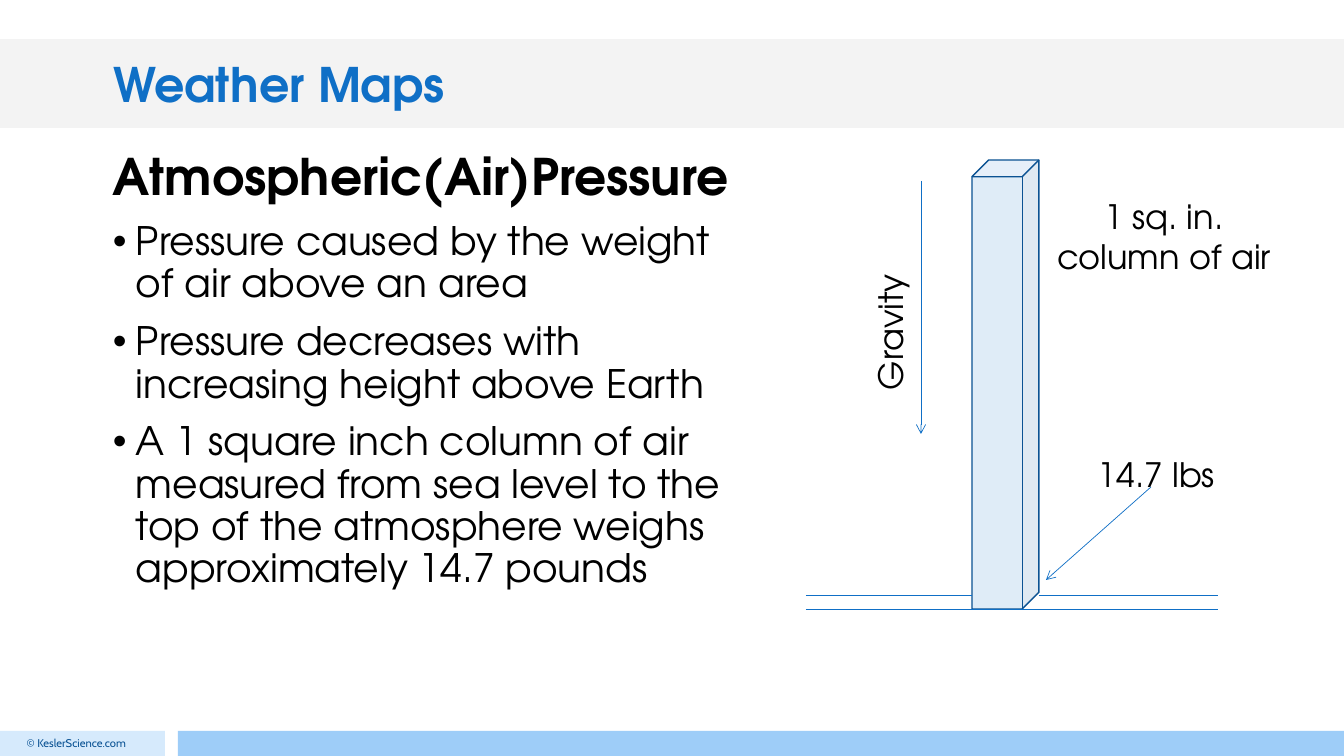
"""Build the Weather Maps slide on atmospheric pressure."""
from dataclasses import dataclass

from lxml import etree
from pptx import Presentation
from pptx.dml.color import RGBColor
from pptx.enum.shapes import MSO_CONNECTOR, MSO_SHAPE
from pptx.enum.text import MSO_ANCHOR, MSO_AUTO_SIZE, PP_ALIGN
from pptx.oxml.ns import qn
from pptx.util import Pt

RECTANGLE, CUBE = MSO_SHAPE.RECTANGLE, MSO_SHAPE.CUBE
STRAIGHT = MSO_CONNECTOR.STRAIGHT
LEFT, CENTER, RIGHT = PP_ALIGN.LEFT, PP_ALIGN.CENTER, PP_ALIGN.RIGHT
TOP, MIDDLE, BOTTOM = MSO_ANCHOR.TOP, MSO_ANCHOR.MIDDLE, MSO_ANCHOR.BOTTOM


@dataclass(frozen=True)
class Theme:
    font: str = "TeX Gyre Adventor"
    footer_font: str = "Cabin"
    blue: str = "0F6FC6"
    outline: str = "0B5292"
    footer_text: str = "0B5394"
    black: str = "000000"
    title_band: str = "D9D9D9"
    footer_light: str = "D6EAFC"
    footer_blue: str = "9ECDF8"
    heading_size: int = 36
    title_size: int = 34
    bullet_size: int = 28
    label_size: int = 24
    footer_size: int = 8


THEME = Theme()
EMU_PER_PX = 914400 / 100.8
SLIDE_SIZE = (1344, 756)

TITLE = "Weather Maps"
HEADING = "Atmospheric(Air)Pressure"
BULLETS = [
    "Pressure caused by the weight of air above an area",
    "Pressure decreases with increasing height above Earth",
    "A 1 square inch column of air measured from sea level to the top of "
    "the atmosphere weighs approximately 14.7 pounds",
]
FOOTER = "© KeslerScience.com"

BANDS = [
    ((0, 731, 165, 25), THEME.footer_light, 100),
    ((178, 731, 1166, 25), THEME.footer_blue, 100),
    ((0, 39, 1344, 89), THEME.title_band, 31),
]
TITLE_BOX = (103, -13, 1033, 130)
BODY_BOX = (103, 147, 644, 556)
FOOTER_BOX = (0, 731, 136, 25)
BULLET_INDENT = 23

COLUMN = (972, 160, 67, 449)
COLUMN_LEFT, COLUMN_RIGHT = COLUMN[0], COLUMN[0] + COLUMN[2]
GROUND_LEFT, GROUND_RIGHT = 806, 1218
GROUND_FRONT, GROUND_BACK = 609, 595
GROUND_LINES = [
    (GROUND_LEFT, GROUND_FRONT, GROUND_RIGHT, GROUND_FRONT),
    (GROUND_LEFT, GROUND_BACK, COLUMN_LEFT, GROUND_BACK),
    (COLUMN_RIGHT, GROUND_BACK, GROUND_RIGHT, GROUND_BACK),
]
ARROWS = [(921, 181, 921, 434), (1151, 487, 1046, 580)]
LABELS = [
    (["Gravity"], (821, 306, 138, 50), LEFT, 270),
    (["14.7 lbs"], (1088, 449, 138, 50), LEFT, 0),
    (["1 sq. in.", "column of air"], (1041, 191, 246, 92), CENTER, 0),
]


def px(length):
    return round(length * EMU_PER_PX)


def place(box):
    return [px(length) for length in box]


def color(value):
    return RGBColor.from_string(value)


def add_block(slide, kind, box, fill, opacity, outline=None):
    shape = slide.shapes.add_shape(kind, *place(box))
    shape.shadow.inherit = False
    shape.fill.solid()
    shape.fill.fore_color.rgb = color(fill)
    if opacity < 100:
        fill_color = shape.fill._xPr.find(qn("a:solidFill"))[0]
        etree.SubElement(fill_color, qn("a:alpha"), val=str(opacity * 1000))
    if outline:
        shape.line.color.rgb = color(outline)
        shape.line.width = Pt(1)
    else:
        shape.line.fill.background()


def add_line(slide, ends, arrow=False):
    connector = slide.shapes.add_connector(STRAIGHT, *place(ends))
    connector.line.color.rgb = color(THEME.blue)
    connector.line.width = Pt(0.5)
    if arrow:
        line = connector.line._get_or_add_ln()
        etree.SubElement(line, qn("a:tailEnd"), type="arrow")
    etree.SubElement(connector._element.spPr, qn("a:effectLst"))


def style(paragraph, size, value=THEME.black, bold=False, font=THEME.font, align=LEFT):
    paragraph.alignment = align
    paragraph.font.name = font
    paragraph.font.size = Pt(size)
    paragraph.font.bold = bold
    paragraph.font.color.rgb = color(value)


def add_text(slide, box, lines, wrap=True, anchor=TOP):
    shape = slide.shapes.add_textbox(*place(box))
    frame = shape.text_frame
    frame.word_wrap = wrap
    frame.vertical_anchor = anchor
    frame.text = "\n".join(lines)
    return shape


def add_title(slide):
    title = slide.shapes.title
    title.left, title.top, title.width, title.height = place(TITLE_BOX)
    slide.shapes._spTree.append(title._element)
    frame = title.text_frame
    frame.text = TITLE
    frame.auto_size = MSO_AUTO_SIZE.NONE
    frame.vertical_anchor = BOTTOM
    style(frame.paragraphs[0], THEME.title_size, THEME.blue, bold=True)


def add_body(slide):
    body = add_text(slide, BODY_BOX, [HEADING, *BULLETS])
    heading, *bullets = body.text_frame.paragraphs
    heading.line_spacing = 0.9
    style(heading, THEME.heading_size, bold=True)
    for paragraph in bullets:
        properties = paragraph._p.get_or_add_pPr()
        properties.set("marL", str(px(BULLET_INDENT)))
        properties.set("indent", str(-px(BULLET_INDENT)))
        etree.SubElement(properties, qn("a:buFont"), typeface="Arial")
        etree.SubElement(properties, qn("a:buChar"), char="•")
        paragraph.line_spacing = 0.9
        paragraph.space_before = Pt(11)
        style(paragraph, THEME.bullet_size)


def add_diagram(slide):
    add_block(slide, CUBE, COLUMN, THEME.blue, 13, THEME.outline)
    for ends in GROUND_LINES:
        add_line(slide, ends)
    for ends in ARROWS:
        add_line(slide, ends, arrow=True)
    for lines, box, align, rotation in LABELS:
        label = add_text(slide, box, lines, wrap=False)
        label.rotation = rotation
        for paragraph in label.text_frame.paragraphs:
            style(paragraph, THEME.label_size, align=align)


def main():
    presentation = Presentation()
    presentation.slide_width, presentation.slide_height = place(SLIDE_SIZE)
    slide = presentation.slides.add_slide(presentation.slide_layouts[5])
    for box, fill, opacity in BANDS:
        add_block(slide, RECTANGLE, box, fill, opacity)
    add_title(slide)
    add_body(slide)
    add_diagram(slide)
    footer = add_text(slide, FOOTER_BOX, [FOOTER], anchor=MIDDLE)
    style(footer.text_frame.paragraphs[0], THEME.footer_size, THEME.footer_text,
          font=THEME.footer_font, align=RIGHT)
    presentation.save("out.pptx")


if __name__ == "__main__":
    main()
